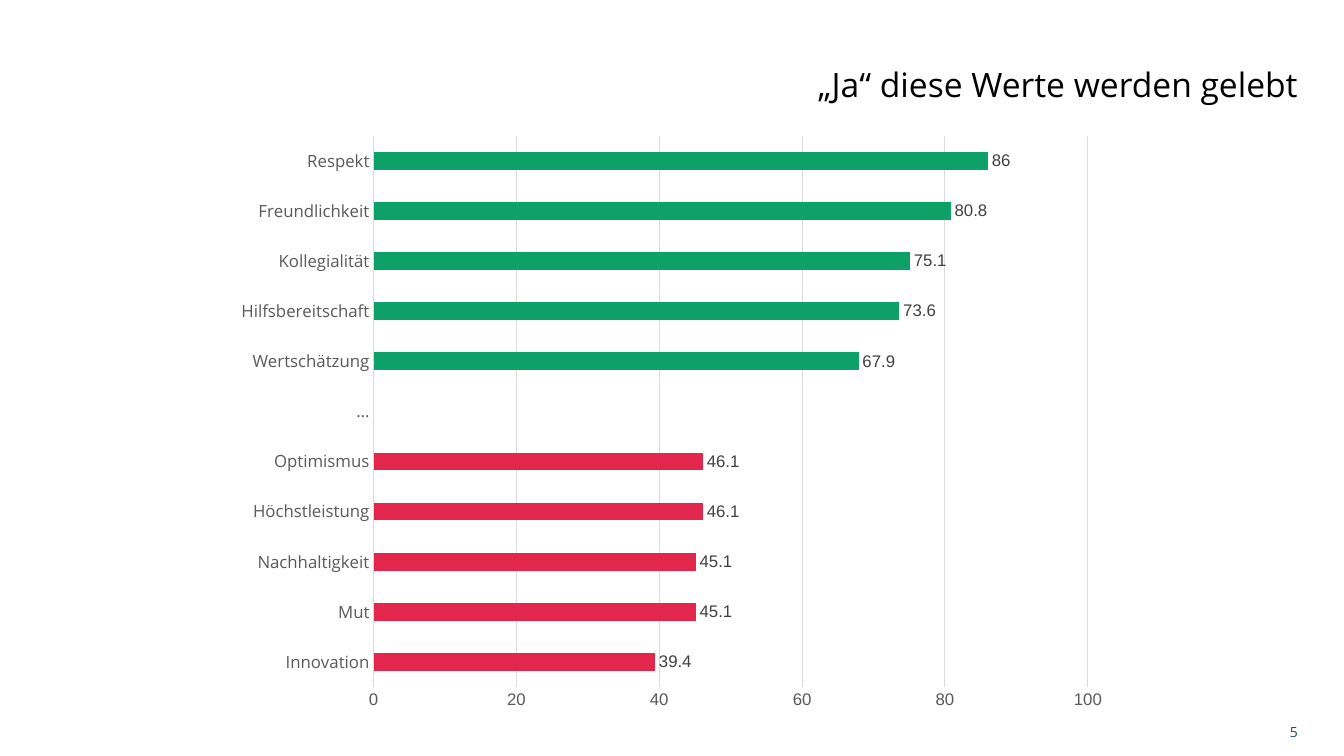
from lxml import etree
from pptx import Presentation
from pptx.chart.data import CategoryChartData
from pptx.dml.color import RGBColor
from pptx.enum.chart import XL_CHART_TYPE as ChartType
from pptx.enum.chart import XL_LABEL_POSITION as LabelPosition
from pptx.enum.chart import XL_TICK_MARK as TickMark
from pptx.enum.text import MSO_ANCHOR, PP_ALIGN
from pptx.oxml.ns import qn
from pptx.util import Inches, Pt

BLACK = RGBColor(0x00, 0x00, 0x00)
NAVY = RGBColor(0x19, 0x4D, 0x6F)
AXIS_GREY = RGBColor(0x59, 0x59, 0x59)
LABEL_GREY = RGBColor(0x40, 0x40, 0x40)
GRID_GREY = RGBColor(0xD9, 0xD9, 0xD9)
BLUE = RGBColor(0x22, 0x3B, 0x7A)
RED = RGBColor(0xE2, 0x26, 0x4C)
GREEN = RGBColor(0x0E, 0xA1, 0x67)

# Bars run from bottom to top
VALUES = [
    ("Innovation", 39.4, RED),
    ("Mut", 45.1, RED),
    ("Nachhaltigkeit", 45.1, RED),
    ("Höchstleistung", 46.1, RED),
    ("Optimismus", 46.1, RED),
    ("…", None, None),
    ("Wertschätzung", 67.9, GREEN),
    ("Hilfsbereitschaft", 73.6, GREEN),
    ("Kollegialität", 75.1, GREEN),
    ("Freundlichkeit", 80.8, GREEN),
    ("Respekt", 86, GREEN),
]


def style_font(font, size, color, name="Arial"):
    font.size = Pt(size)
    font.name = name
    font.color.rgb = color


def add_right_text(slide, text, left, top, width, size, color, anchor):
    """Add a one-line text box aligned to the right margin."""
    box = slide.shapes.add_textbox(Inches(left), Inches(top), Inches(width), Inches(0.48))
    tf = box.text_frame
    tf.word_wrap = True
    tf.vertical_anchor = anchor
    p = tf.paragraphs[0]
    p.alignment = PP_ALIGN.RIGHT
    r = p.add_run()
    r.text = text
    style_font(r.font, size, color, "Open Sans")


prs = Presentation()
prs.slide_width = Inches(13.33)
prs.slide_height = Inches(7.5)
s = prs.slides.add_slide(prs.slide_layouts[6])

add_right_text(s, "5", 9.97, 7.02, 3, 10, NAVY, MSO_ANCHOR.MIDDLE)
add_right_text(s, "„Ja“ diese Werte werden gelebt", 2.89, 0.58, 10.08, 24, BLACK, MSO_ANCHOR.TOP)

# Chart
data = CategoryChartData()
data.categories = [name for name, value, color in VALUES]
data.add_series("Series 1", [value for name, value, color in VALUES])
chart = s.shapes.add_chart(
    ChartType.BAR_CLUSTERED, Inches(2.22), Inches(1.23), Inches(8.89), Inches(5.93), data
).chart
chart.has_title = False
chart.has_legend = False
style_font(chart.font, 10, BLACK)

# Plot position as fractions of the chart area
plot_area = chart.plots[0]._element.getparent()
for old_layout in plot_area.findall(qn("c:layout")):
    plot_area.remove(old_layout)
layout = etree.Element(qn("c:layout"))
manual = etree.SubElement(layout, qn("c:manualLayout"))
for tag, val in [("layoutTarget", "inner"), ("xMode", "edge"), ("yMode", "edge"),
                 ("x", "0.167"), ("y", "0.02"), ("w", "0.797"), ("h", "0.922")]:
    etree.SubElement(manual, qn(f"c:{tag}")).set("val", val)
plot_area.insert(0, layout)

# Axes
cat_axis, val_axis = chart.category_axis, chart.value_axis
for axis, font_name in [(cat_axis, "Open Sans"), (val_axis, "Arial")]:
    axis.major_tick_mark = TickMark.NONE
    axis.minor_tick_mark = TickMark.NONE
    style_font(axis.tick_labels.font, 12, AXIS_GREY, font_name)
val_axis.minimum_scale = 0
val_axis.maximum_scale = 100
val_axis.major_unit = 20
val_axis.has_major_gridlines = True
for line in (cat_axis.format.line, val_axis.major_gridlines.format.line):
    line.color.rgb = GRID_GREY
    line.width = Pt(0.75)
val_axis.format.line.fill.background()

# Bars and value labels
plot = chart.plots[0]
plot.gap_width = 182
plot.vary_by_categories = False
series = plot.series[0]
series.invert_if_negative = False
series.format.fill.solid()
series.format.fill.fore_color.rgb = BLUE
for i, (name, value, color) in enumerate(VALUES):
    if color is not None:
        fill = series.points[i].format.fill
        fill.solid()
        fill.fore_color.rgb = color
labels = series.data_labels
labels.show_value = True
labels.position = LabelPosition.OUTSIDE_END
style_font(labels.font, 12, LABEL_GREY)

prs.save("out.pptx")
